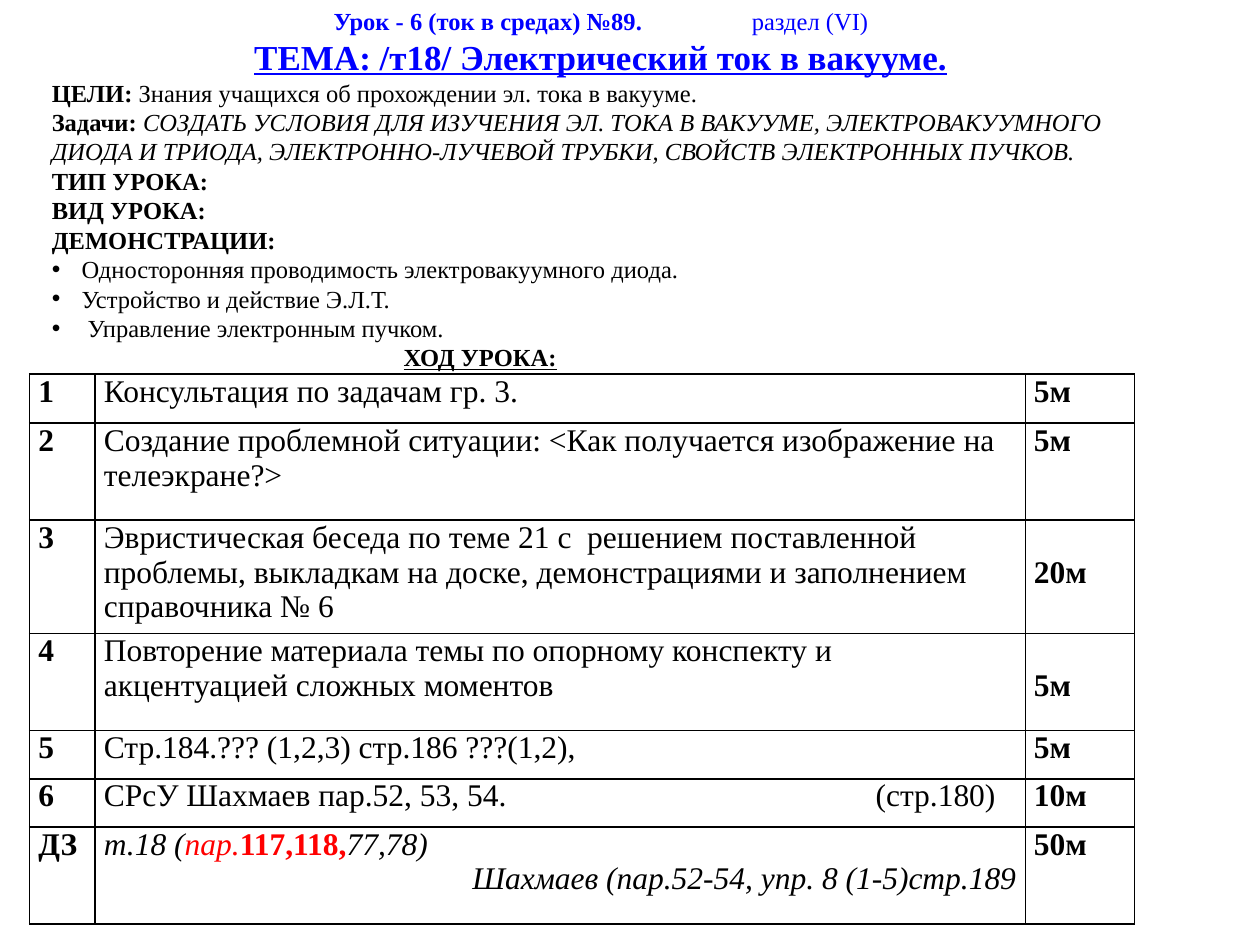
import pptx
import pptx.util
import pptx.dml.color
import pptx.enum.text
import pptx.oxml
import pptx.oxml.ns

Pt = pptx.util.Pt
ALIGN = pptx.enum.text.PP_ALIGN
FONT = "Times New Roman"
FLAGS = {"b": "bold", "i": "italic", "u": "underline"}

HEAD = [
    ([("\tУрок - 6 (ток в средах) №89.", "b"), ("\tраздел (VI)", "")],
     {"color": "0000FF", "tabs": [161, 400]}),
    ([("ТЕМА: /т18/ Электрический ток в вакууме.", "bu")],
     {"color": "0000FF", "size": 20, "align": ALIGN.CENTER}),
    ([("ЦЕЛИ:", "b"), (" Знания учащихся об прохождении эл. тока в вакууме.", "")], {}),
    ([("Задачи: ", "b"),
      ("СОЗДАТЬ УСЛОВИЯ ДЛЯ ИЗУЧЕНИЯ ЭЛ. ТОКА В ВАКУУМЕ, ЭЛЕКТРОВАКУУМНОГО "
       "ДИОДА И ТРИОДА, ЭЛЕКТРОННО-ЛУЧЕВОЙ ТРУБКИ, СВОЙСТВ ЭЛЕКТРОННЫХ ПУЧКОВ.", "i")], {}),
    ([("ТИП УРОКА:", "b")], {}),
    ([("ВИД УРОКА:", "b")], {}),
    ([("ДЕМОНСТРАЦИИ:", "b")], {}),
    ([("Односторонняя проводимость электровакуумного диода.", "")], {"bullet": "•"}),
    ([("Устройство и действие Э.Л.Т.", "")], {"bullet": "•"}),
    ([(" Управление электронным пучком.", "")], {"bullet": "•"}),
    ([("ХОД УРОКА:", "bu")], {"left": 201}),
]

PLAN = [
    ("1", [([("Консультация по задачам гр. 3.", "")], {})], "5м", 28, 0),
    ("2", [([("Создание проблемной ситуации: <Как получается изображение на телеэкране?>", "")], {})],
     "5м", 55.5, 0),
    ("3", [([("Эвристическая беседа по теме 21 с  решением поставленной проблемы, выкладкам "
              "на доске, демонстрациями и заполнением справочника № 6", "")], {})], "20м", 55.5, 20),
    ("4", [([("Повторение материала темы по опорному конспекту и акцентуацией сложных моментов", "")], {})],
     "5м", 55.5, 20),
    ("5", [([("Стр.184.??? (1,2,3) стр.186 ???(1,2),", "")], {})], "5м", 27.5, 0),
    ("6", [([("СРсУ Шахмаев пар.52, 53, 54.\t(стр.180)", "")], {"tabs": [441]})], "10м", 27.5, 0),
    ("ДЗ", [([("т.18 (", "i"), ("пар.", "i", "FF0000"), ("117,118,", "b", "FF0000"), ("77,78)", "i")], {}),
            ([("Шахмаев (пар.52-54, упр. 8 (1-5)стр.189", "i")], {"align": ALIGN.RIGHT})],
     "50м", 55.5, 0),
]


def paint(text):
    return pptx.dml.color.RGBColor.from_string(text)


def apply(item, style):
    for name, value in style.items():
        setattr(item, name, value)


def node(root, tag, **attrs):
    part = root.makeelement(pptx.oxml.ns.qn(tag), attrs)
    root.append(part)
    return part


def write(frame, lines, size):
    for pos, (runs, style) in enumerate(lines):
        para = frame.paragraphs[0] if pos == 0 else frame.add_paragraph()
        para.alignment = style.get("align", ALIGN.LEFT)
        props = para._p.get_or_add_pPr()
        if "left" in style:
            props.set("marL", str(Pt(style["left"])))
        if "bullet" in style:
            props.set("marL", str(Pt(17)))
            props.set("indent", str(Pt(-17)))
            node(props, "a:buFont", typeface="Arial")
            node(props, "a:buChar", char=style["bullet"])
        if "tabs" in style:
            stops = node(props, "a:tabLst")
            for stop in style["tabs"]:
                node(stops, "a:tab", pos=str(Pt(stop)), algn="l")
        for text, flags, *tint in runs:
            run = para.add_run()
            run.text = text
            apply(run.font, {"name": FONT, "size": Pt(style.get("size", size))})
            apply(run.font, {FLAGS[flag]: True for flag in flags})
            run.font.color.rgb = paint(tint[0] if tint else style.get("color", "000000"))


def intro(slide, left, top, width, height):
    frame = slide.shapes.add_textbox(Pt(left), Pt(top), Pt(width), Pt(height)).text_frame
    frame.word_wrap = True
    write(frame, HEAD, 14)


def border(cell):
    props = cell._tc.get_or_add_tcPr()
    for side in "LRTB":
        line = node(props, f"a:ln{side}", w=str(Pt(1)))
        node(node(line, "a:solidFill"), "a:srgbClr", val="000000")
    cell.fill.background()


def steps(slide, left, top, width, height):
    table = slide.shapes.add_table(len(PLAN), 3, Pt(left), Pt(top), Pt(width), Pt(height)).table
    apply(table, {"first_row": False, "horz_banding": False})
    sides = 37.5, 62.5
    for col, wide in zip(table.columns, (sides[0], width - sum(sides), sides[1])):
        col.width = Pt(wide)
    for row, (mark, lines, time, tall, drop) in zip(table.rows, PLAN):
        row.height = Pt(tall)
        parts = [([(mark, "b")], {})], lines, [([(time, "b")], {})]
        for cell, part, inset in zip(row.cells, parts, (0, 0, drop)):
            apply(cell, {"margin_left": Pt(5), "margin_right": Pt(5),
                         "margin_top": Pt(inset), "margin_bottom": 0})
            border(cell)
            write(cell.text_frame, part, 18)


def main():
    deck = pptx.Presentation()
    apply(deck, {"slide_width": Pt(720), "slide_height": Pt(540)})
    slide = deck.slides.add_slide(deck.slide_layouts[6])
    intro(slide, 22.5, 0, 641.5, 235)
    steps(slide, 16.9, 213.75, 631.5, 305)
    deck.save("out.pptx")


if __name__ == "__main__":
    main()
